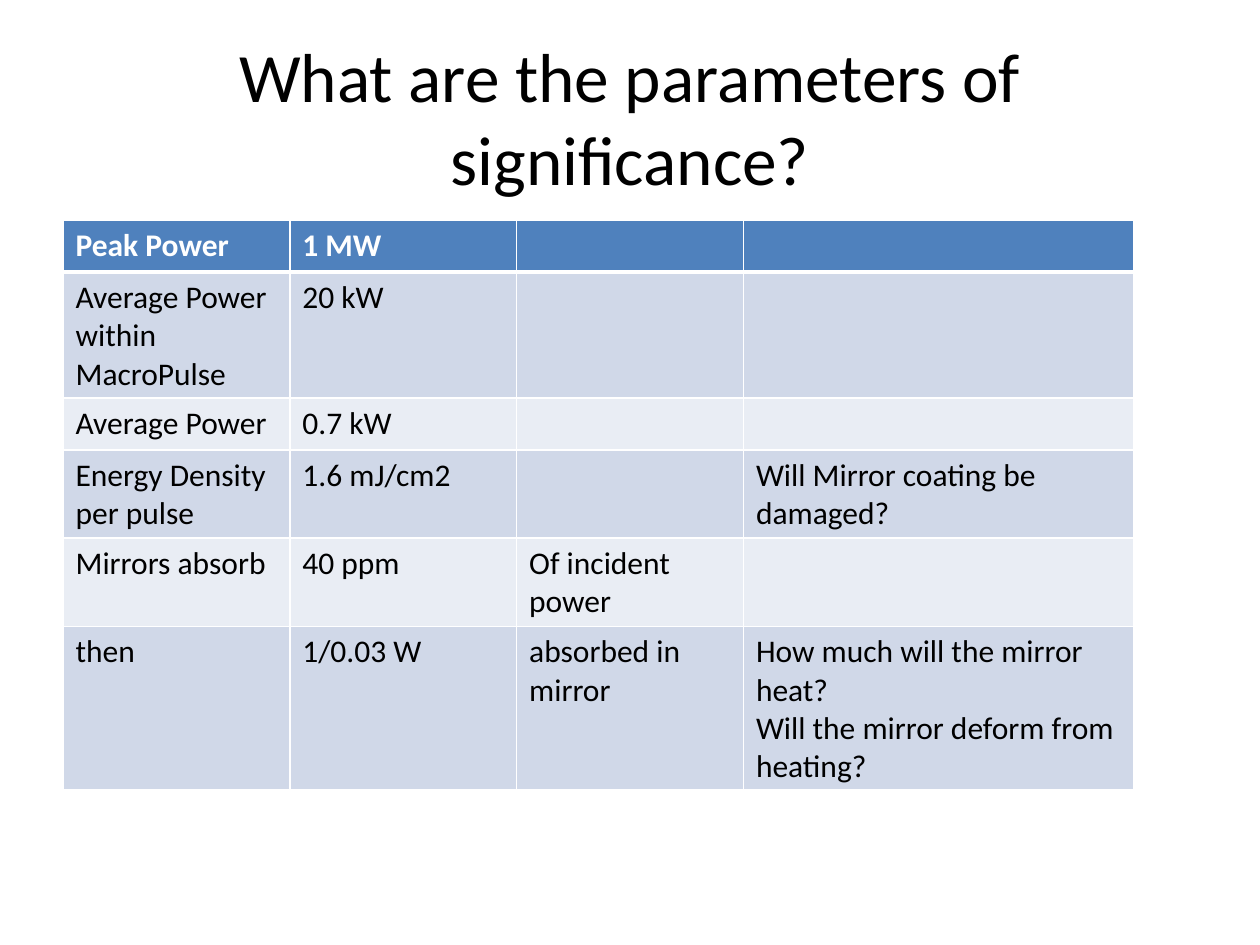
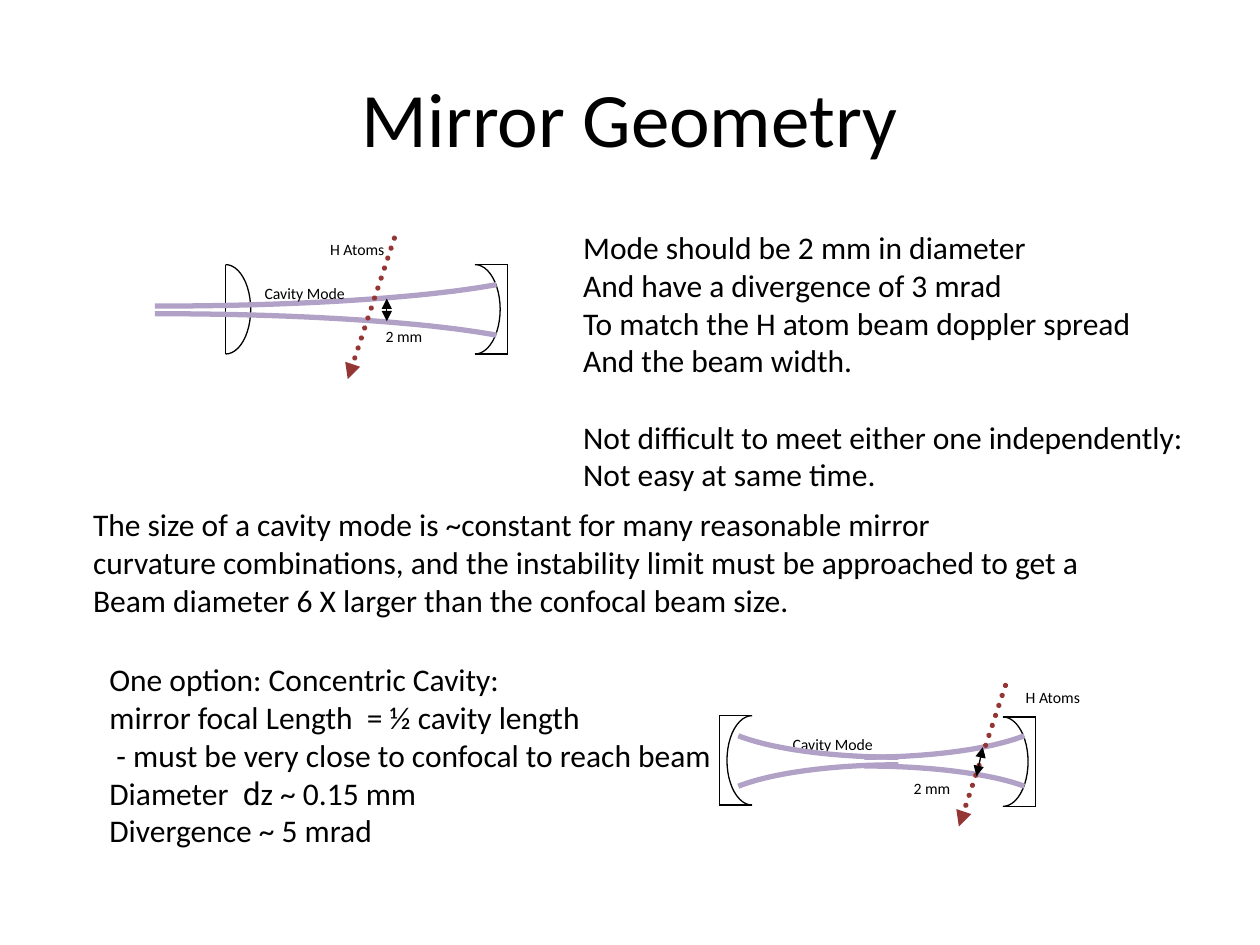
import math

import pptx
import pptx.dml.color
import pptx.enum.dml
import pptx.enum.shapes
import pptx.enum.text
import pptx.oxml
import pptx.oxml.ns
import pptx.util
from pptx.util import Inches

RGBColor = pptx.dml.color.RGBColor
BLACK = RGBColor(0x00, 0x00, 0x00)
WHITE = RGBColor(0xFF, 0xFF, 0xFF)
HEADER_BLUE = RGBColor(0x4F, 0x81, 0xBD)
ROW_DARK = RGBColor(0xD0, 0xD8, 0xE8)
ROW_LIGHT = RGBColor(0xE9, 0xED, 0xF4)
BEAM_PURPLE = RGBColor(0xB2, 0xA1, 0xC7)
ATOM_RED = RGBColor(0x94, 0x36, 0x34)
FONT = "Calibri"
SYMBOL_FONT = "Roboto"
BODY_SIZE = 18
LABEL_SIZE = 9
THIN, THICK = 0.75, 3
MIRROR_HEIGHT = 0.71
MIRROR_CURVE = 0.2
MIRROR_DEPTH = 0.26
CURVE_STEPS = 24

COLUMN_WIDTHS = [1.8, 1.8, 1.8, 3.1]
ROW_HEIGHT = 0.41
PARAMETERS = [
    ["Peak Power", "1 MW", "", ""],
    ["Average Power  within MacroPulse", "20 kW", "", ""],
    ["Average Power", "0.7 kW", "", ""],
    ["Energy Density per pulse", "1.6 mJ/cm2", "", "Will Mirror coating be damaged?"],
    ["Mirrors absorb", "40 ppm", "Of incident power", ""],
    ["then", "1/0.03 W", "absorbed in mirror",
     "How much will the mirror heat?\nWill the mirror deform from heating?"],
]

MODE_LINES = [
    "Mode should be 2 mm in diameter",
    "And have a divergence of 3 mrad",
    "To match the H atom beam doppler spread",
    "And the beam width.",
    "Not difficult to meet either one independently:",
    "Not easy at same time.",
]
SIZE_LINES = [
    "The size of a cavity mode is ~constant for many reasonable mirror",
    "curvature combinations, and the instability limit must be approached to get a",
    "Beam diameter 6 X larger than the confocal beam size.",
]
OPTION_LINES = [
    "One option: Concentric Cavity:",
    "mirror focal Length  = ½ cavity length",
    " - must be very close to confocal to reach beam",
    [("Diameter  ", FONT), ("d", SYMBOL_FONT), ("z ~ 0.15 mm", FONT)],
    "Divergence ~ 5 mrad",
]


# Text
def style_font(font, size, color=BLACK, bold=False):
    font.name = FONT
    font.size = pptx.util.Pt(size)
    font.color.rgb = color
    font.bold = bold


def add_text(slide, box, lines, size, wrap=True):
    """Write one paragraph per line; a line is a string or (text, font) pairs."""
    shape = slide.shapes.add_textbox(*map(Inches, box))
    frame = shape.text_frame
    frame.word_wrap = wrap
    for index, line in enumerate(lines):
        paragraph = frame.paragraphs[0] if index == 0 else frame.add_paragraph()
        style_font(paragraph.font, size)
        for text, font_name in [(line, FONT)] if isinstance(line, str) else line:
            run = paragraph.add_run()
            run.text = text
            if font_name != FONT:
                run.font.name = font_name
    return frame


def add_title(slide, text, size):
    frame = add_text(slide, (0.5, 0.3, 9, 1.25), [text], size)
    frame.vertical_anchor = pptx.enum.text.MSO_ANCHOR.MIDDLE
    frame.paragraphs[0].alignment = pptx.enum.text.PP_ALIGN.CENTER


def add_note(slide, box, lines):
    frame = add_text(slide, box, lines, BODY_SIZE, wrap=False)
    frame.auto_size = pptx.enum.text.MSO_AUTO_SIZE.SHAPE_TO_FIT_TEXT
    return frame


def add_label(slide, left, top, width, text):
    frame = add_text(slide, (left, top, width, 0.24), [text], LABEL_SIZE)
    frame.margin_left = frame.margin_right = Inches(0.09)
    frame.margin_top = frame.margin_bottom = Inches(0.04)


# Table
def set_borders(cell, top, bottom):
    properties = cell._tc.get_or_add_tcPr()
    for side, width in (("L", 1), ("R", 1), ("T", top), ("B", bottom)):
        properties.append(pptx.oxml.parse_xml(
            f'<a:ln{side} {pptx.oxml.ns.nsdecls("a")} w="{pptx.util.Pt(width)}">'
            f'<a:solidFill><a:srgbClr val="{WHITE}"/></a:solidFill></a:ln{side}>'))


def add_parameter_table(slide):
    row_count = len(PARAMETERS)
    table = slide.shapes.add_table(
        row_count, len(COLUMN_WIDTHS), Inches(0.5), Inches(1.75),
        Inches(sum(COLUMN_WIDTHS)), Inches(ROW_HEIGHT * row_count)).table
    for column, width in zip(table.columns, COLUMN_WIDTHS):
        column.width = Inches(width)
    for row_index, texts in enumerate(PARAMETERS):
        header = row_index == 0
        fill = HEADER_BLUE if header else (ROW_DARK if row_index % 2 else ROW_LIGHT)
        table.rows[row_index].height = Inches(ROW_HEIGHT)
        for column_index, text in enumerate(texts):
            cell = table.cell(row_index, column_index)
            set_borders(cell, 3 if row_index == 1 else 1, 3 if header else 1)
            cell.fill.solid()
            cell.fill.fore_color.rgb = fill
            cell.text = text
            for paragraph in cell.text_frame.paragraphs:
                style_font(paragraph.font, BODY_SIZE, WHITE if header else BLACK, header)


# Lines and curves
def add_line(slide, start, end, color=BLACK, width=THIN, dotted=False, arrows=()):
    connector = slide.shapes.add_connector(
        pptx.enum.shapes.MSO_CONNECTOR.STRAIGHT, *map(Inches, (*start, *end)))
    connector.line.color.rgb = color
    connector.line.width = pptx.util.Pt(width)
    properties = connector._element.spPr
    outline = properties.find(pptx.oxml.ns.qn("a:ln"))
    if dotted:
        connector.line.dash_style = pptx.enum.dml.MSO_LINE.ROUND_DOT
        outline.set("cap", "rnd")
    for arrow in arrows:
        outline.append(pptx.oxml.parse_xml(
            f'<a:{arrow} {pptx.oxml.ns.nsdecls("a")} type="triangle"/>'))
    properties.append(pptx.oxml.parse_xml(f'<a:effectLst {pptx.oxml.ns.nsdecls("a")}/>'))


def add_curve(slide, points, color, width):
    points = [(Inches(x), Inches(y)) for x, y in points]
    builder = slide.shapes.build_freeform(*points[0], scale=1.0)
    builder.add_line_segments(points[1:], close=False)
    shape = builder.convert_to_shape()
    shape.shadow.inherit = False
    shape.fill.background()
    shape.line.color.rgb = color
    shape.line.width = pptx.util.Pt(width)


# Cavity parts
def add_mirror_face(slide, edge, top, direction):
    """Draw a half ellipse bulging to the right (1) or to the left (-1)."""
    radius = MIRROR_HEIGHT / 2
    angles = [math.pi * (step / CURVE_STEPS - 0.5) for step in range(CURVE_STEPS + 1)]
    add_curve(slide, [(edge + direction * MIRROR_CURVE * math.cos(angle),
                       top + radius + radius * math.sin(angle)) for angle in angles],
              BLACK, THIN)


def add_convex_mirror(slide, edge, top):
    add_mirror_face(slide, edge, top, 1)
    add_line(slide, (edge, top), (edge, top + MIRROR_HEIGHT))


def add_concave_mirror(slide, edge, top, direction):
    add_mirror_face(slide, edge, top, direction)
    back, bottom = edge + direction * MIRROR_DEPTH, top + MIRROR_HEIGHT
    add_line(slide, (back, top), (back, bottom))
    for y in (top, bottom):
        add_line(slide, (edge, y), (back, y))


def add_beam(slide, waist, end, upper, lower):
    """Draw both beam edges, each from its waist height to its end height."""
    for waist_y, end_y in (upper, lower):
        points = []
        for step in range(CURVE_STEPS + 1):
            t = step / CURVE_STEPS
            inner, outer = 3 * t * (1 - t) ** 2, 3 * t * t * (1 - t)
            along = 0.4 * inner + 0.78 * outer + t ** 3
            across = 0.36 * outer + t ** 3
            points.append((waist + along * (end - waist),
                           waist_y + across * (end_y - waist_y)))
        add_curve(slide, points, BEAM_PURPLE, THICK)


def add_atom_beam(slide, left, top):
    add_line(slide, (left + 0.37, top), (left, top + 1.12), ATOM_RED, THICK,
             dotted=True, arrows=["tailEnd"])


def add_width_arrow(slide, start, end):
    add_line(slide, start, end, arrows=["headEnd", "tailEnd"])


def add_half_cavity(slide):
    add_convex_mirror(slide, 1.79, 2.1)
    add_concave_mirror(slide, 3.77, 2.1, 1)
    add_beam(slide, 1.23, 3.94, (2.43, 2.26), (2.49, 2.66))
    add_atom_beam(slide, 2.76, 1.89)
    add_width_arrow(slide, (3.07, 2.55), (3.07, 2.37))
    add_label(slide, 2.97, 2.55, 0.49, "2 mm")
    add_label(slide, 2.53, 1.86, 0.72, "H Atoms")
    add_label(slide, 2.01, 2.21, 0.84, "Cavity Mode")


def add_concentric_cavity(slide):
    add_concave_mirror(slide, 7.96, 5.69, 1)
    add_beam(slide, 6.86, 8.13, (6.01, 5.84), (6.08, 6.24))
    add_atom_beam(slide, 7.61, 5.44)
    add_width_arrow(slide, (7.75, 6.16), (7.8, 5.93))
    add_label(slide, 7.16, 6.14, 0.49, "2 mm")
    add_label(slide, 8.05, 5.42, 0.72, "H Atoms")
    add_label(slide, 6.2, 5.79, 0.84, "Cavity Mode")
    add_concave_mirror(slide, 5.97, 5.68, -1)
    add_beam(slide, 7.13, 5.86, (6.01, 5.84), (6.07, 6.24))


# Slides
def build_parameters_slide(slide):
    add_title(slide, "What are the parameters of significance?", 39.6)
    add_parameter_table(slide)


def build_geometry_slide(slide):
    add_title(slide, "Mirror Geometry", 44)
    add_half_cavity(slide)
    mode_note = add_note(slide, (4.53, 1.76, 5.03, 2.22), MODE_LINES)
    mode_note.paragraphs[4].space_before = pptx.util.Pt(22)
    add_note(slide, (0.64, 3.96, 8.18, 1.01), SIZE_LINES)
    add_note(slide, (0.77, 5.19, 5.04, 1.62), OPTION_LINES)
    add_concentric_cavity(slide)


def main():
    presentation = pptx.Presentation()
    presentation.slide_width = Inches(10)
    presentation.slide_height = Inches(7.5)
    blank = presentation.slide_layouts[6]
    for build in (build_parameters_slide, build_geometry_slide):
        build(presentation.slides.add_slide(blank))
    presentation.save("out.pptx")


if __name__ == "__main__":
    main()
